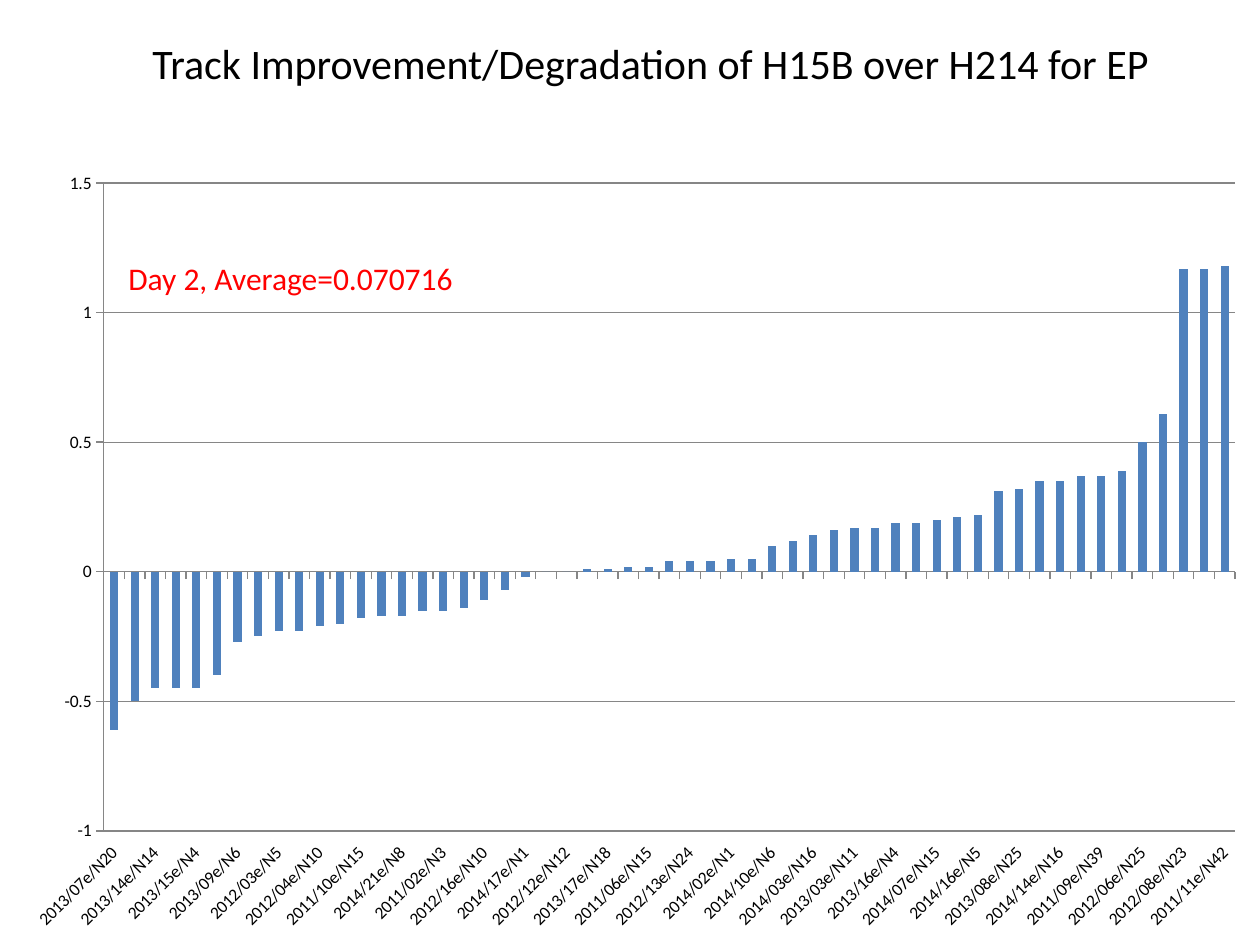
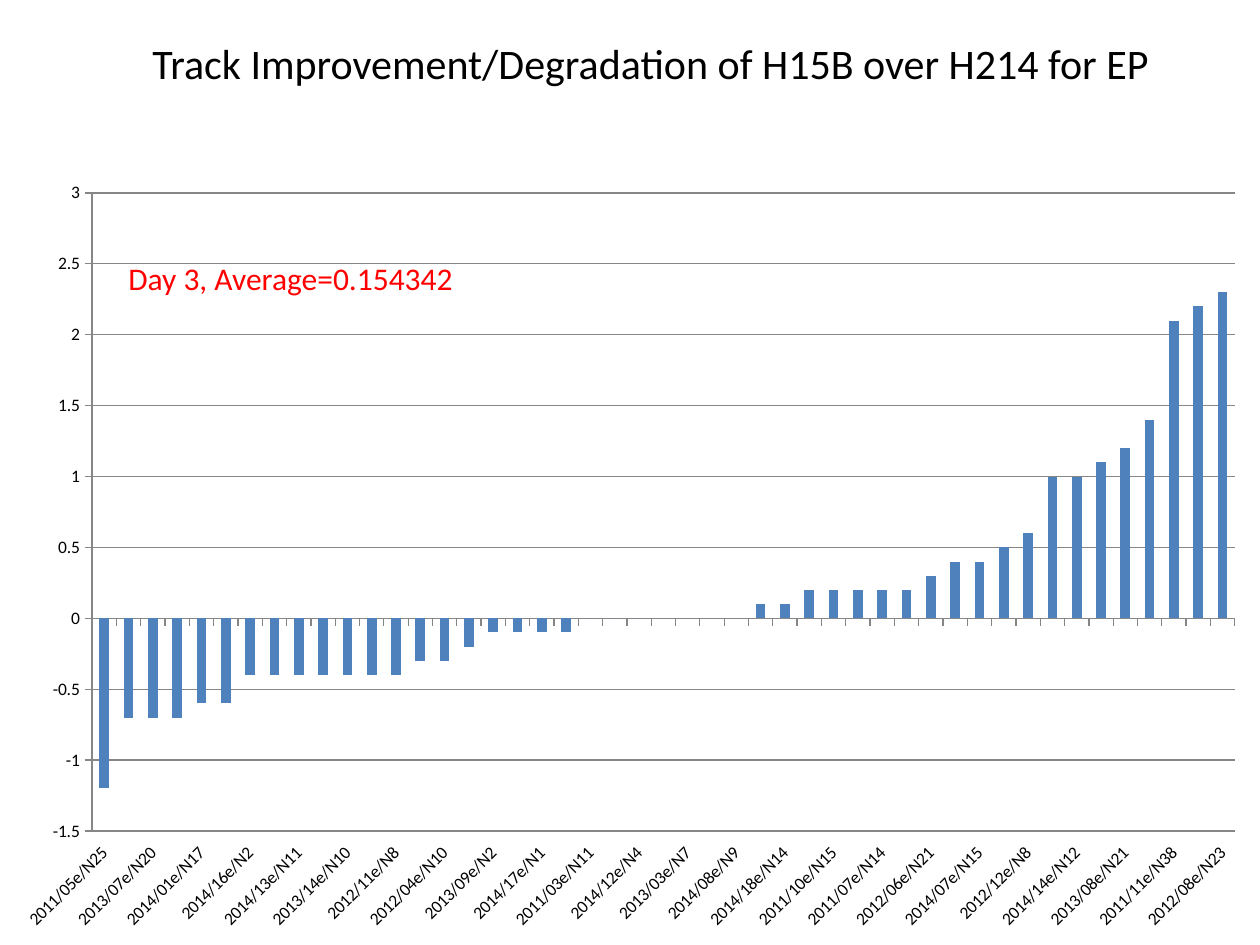
from dataclasses import dataclass

from pptx import Presentation, util as u
from pptx.chart.data import CategoryChartData
from pptx.dml.color import RGBColor
from pptx.enum import chart as ch, text

PX = 9144  # EMU per px, 100 px to the inch
FONT = "Calibri"
BLACK = RGBColor(0x00, 0x00, 0x00)
RED = RGBColor(0xFF, 0x00, 0x00)
BAR_BLUE = RGBColor(0x4F, 0x81, 0xBD)
AXIS_GREY = RGBColor(0x86, 0x86, 0x86)
TITLE = "Track Improvement/Degradation of H15B over H214 for EP"


@dataclass(frozen=True)
class Box:
    x: int
    y: int
    w: int
    h: int

    def emu(self) -> list[u.Emu]:
        return [u.Emu(v * PX) for v in (self.x, self.y, self.w, self.h)]


@dataclass(frozen=True)
class DayChart:
    """Track change of every forecast at one lead time."""
    caption: str
    frame: Box
    low: float
    high: float
    forecasts: list[str]
    changes: list[float]


TITLE_BOX = Box(58, 25, 917, 50)
CAPTION_BOX = Box(92, 201, 392, 40)

DAYS = [
    DayChart(
        "Day 2, Average=0.070716", Box(8, 125, 992, 625), -1, 1.5,
        """2013/07e/N20 2011/05e/N25 2013/14e/N14 2012/17e/N10 2013/15e/N4
        2014/15e/N18 2013/09e/N6 2013/05e/N9 2012/03e/N5 2012/07e/N19
        2012/04e/N10 2013/13e/N8 2011/10e/N15 2012/11e/N12 2014/21e/N8
        2011/03e/N11 2011/02e/N3 2013/11e/N4 2012/16e/N10 2014/12e/N4
        2014/17e/N1 2014/13e/N11 2012/12e/N12 2013/02e/N1 2013/17e/N18
        2014/01e/N21 2011/06e/N15 2012/09e/N9 2012/13e/N24 2011/07e/N18
        2014/02e/N1 2014/08e/N13 2014/10e/N6 2013/12e/N5 2014/03e/N16
        2013/18e/N4 2013/03e/N11 2013/04e/N10 2013/16e/N4 2014/11e/N24
        2014/07e/N15 2014/19e/N18 2014/16e/N5 2012/15e/N9 2013/08e/N25
        2014/18e/N16 2014/14e/N16 2011/04e/N23 2011/09e/N39 2014/04e/N20
        2012/06e/N25 2012/05e/N32 2012/08e/N23 2013/06e/N15
        2011/11e/N42""".split(),
        [-0.61, -0.5, -0.45, -0.45, -0.45, -0.4, -0.27, -0.25, -0.23, -0.23,
         -0.21, -0.2, -0.18, -0.17, -0.17, -0.15, -0.15, -0.14, -0.11, -0.07,
         -0.02, 0, 0, 0.01, 0.01, 0.02, 0.02, 0.04, 0.04, 0.04,
         0.05, 0.05, 0.1, 0.12, 0.14, 0.16, 0.17, 0.17, 0.19, 0.19,
         0.2, 0.21, 0.22, 0.31, 0.32, 0.35, 0.35, 0.37, 0.37, 0.39,
         0.5, 0.61, 1.17, 1.17, 1.18],
    ),
    DayChart(
        "Day 3, Average=0.154342", Box(0, 133, 1000, 617), -1.5, 3,
        """2011/05e/N25 2012/13e/N24 2013/07e/N20 2014/15e/N18 2014/01e/N17
        2012/17e/N10 2014/16e/N2 2013/17e/N18 2014/13e/N11 2014/21e/N8
        2013/14e/N10 2012/09e/N9 2012/11e/N8 2014/11e/N24 2012/04e/N10
        2012/07e/N16 2013/09e/N2 2013/18e/N1 2014/17e/N1 2013/05e/N7
        2011/03e/N11 2013/13e/N2 2014/12e/N4 2011/04e/N19 2013/03e/N7
        2014/03e/N12 2014/08e/N9 2012/16e/N6 2014/18e/N14 2014/19e/N14
        2011/10e/N15 2014/10e/N6 2011/07e/N14 2013/04e/N10 2012/06e/N21
        2014/04e/N16 2014/07e/N15 2012/15e/N5 2012/12e/N8 2011/06e/N11
        2014/14e/N12 2011/09e/N38 2013/08e/N21 2012/05e/N30 2011/11e/N38
        2013/06e/N11 2012/08e/N23""".split(),
        [-1.2, -0.7, -0.7, -0.7, -0.6, -0.6, -0.4, -0.4, -0.4, -0.4,
         -0.4, -0.4, -0.4, -0.3, -0.3, -0.2, -0.1, -0.1, -0.1, -0.1,
         0, 0, 0, 0, 0, 0, 0, 0.1, 0.1, 0.2,
         0.2, 0.2, 0.2, 0.2, 0.3, 0.4, 0.4, 0.5, 0.6, 1,
         1, 1.1, 1.2, 1.4, 2.1, 2.2, 2.3],
    ),
]


def add_text(s, box: Box, words: str, size: int, color: RGBColor,
             align: text.PP_ALIGN = text.PP_ALIGN.LEFT) -> None:
    tf = s.shapes.add_textbox(*box.emu()).text_frame
    tf.word_wrap = True
    tf.auto_size = text.MSO_AUTO_SIZE.SHAPE_TO_FIT_TEXT
    p = tf.paragraphs[0]
    p.alignment = align
    r = p.add_run()
    r.text = words
    r.font.size = u.Pt(size)
    r.font.name = FONT
    r.font.color.rgb = color


def style_line(line) -> None:
    line.color.rgb = AXIS_GREY
    line.width = u.Pt(0.75)


def add_day_chart(s, day: DayChart) -> None:
    data = CategoryChartData()
    data.categories = day.forecasts
    data.add_series("Series 1", day.changes)
    chart = s.shapes.add_chart(
        ch.XL_CHART_TYPE.COLUMN_CLUSTERED, *day.frame.emu(), data).chart
    chart.has_title = False
    chart.has_legend = False
    chart.font.name = FONT
    chart.font.size = u.Pt(10)
    chart.font.color.rgb = BLACK

    bars = chart.plots[0]
    bars.gap_width = 150
    bars.vary_by_categories = False
    series = bars.series[0]
    series.invert_if_negative = False
    series.format.fill.solid()
    series.format.fill.fore_color.rgb = BAR_BLUE

    cats, vals = chart.category_axis, chart.value_axis
    for axis in (cats, vals):
        axis.major_tick_mark = ch.XL_TICK_MARK.OUTSIDE
        axis.minor_tick_mark = ch.XL_TICK_MARK.NONE
        style_line(axis.format.line)
    cats.tick_label_position = ch.XL_TICK_LABEL_POSITION.LOW
    vals.minimum_scale, vals.maximum_scale = day.low, day.high
    vals.major_unit = 0.5
    vals.has_major_gridlines = True
    style_line(vals.major_gridlines.format.line)


def main() -> None:
    prs = Presentation()
    prs.slide_width, prs.slide_height = u.Emu(1000 * PX), u.Emu(750 * PX)
    for day in DAYS:
        s = prs.slides.add_slide(prs.slide_layouts[6])
        add_day_chart(s, day)
        add_text(s, TITLE_BOX, TITLE, 24, BLACK, text.PP_ALIGN.CENTER)
        add_text(s, CAPTION_BOX, day.caption, 18, RED)
    prs.save("out.pptx")


if __name__ == "__main__":
    main()
